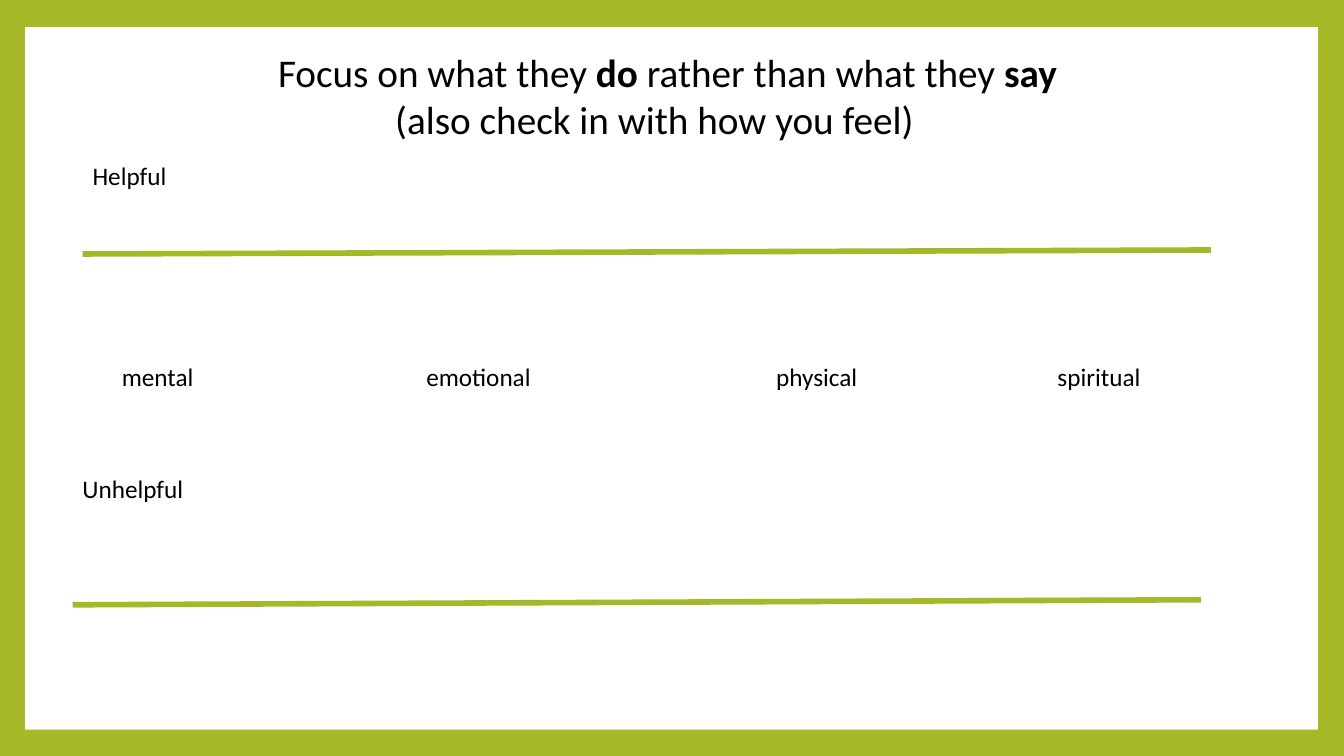
from lxml.etree import SubElement
from pptx import Presentation
from pptx.dml.color import RGBColor
from pptx.enum.shapes import MSO_CONNECTOR as Connector, MSO_SHAPE as Shape
from pptx.enum.text import MSO_ANCHOR as Anchor, MSO_AUTO_SIZE as AutoSize, PP_ALIGN as Align
from pptx.oxml.ns import qn
from pptx.util import Inches, Pt

GREEN = RGBColor(0xA6, 0xB7, 0x27)
WHITE = RGBColor(0xFF, 0xFF, 0xFF)
BLACK = RGBColor(0x00, 0x00, 0x00)
FONT = "Calibri"

TITLE_LINES = [
    [("Focus on what they ", False), ("do ", True),
     ("rather than what they ", False), ("say", True)],
    [("(also check in with how you feel)", False)],
]
SCALE_LABELS = [("Helpful", 0.82, 1.54, 0.96), ("Unhelpful", 0.72, 4.65, 1.23)]
ASPECT_TOP = 3.54
ASPECTS = [("mental", 1.11, 0.94), ("emotional", 4.13, 1.27),
           ("physical", 7.6, 1.04), ("spiritual", 10.39, 1.04)]
SCALE_LINES = [(0.82, 2.52, 12.01, 2.48), (0.72, 6, 11.91, 5.95)]


def add_text(paragraph, text, size=18, bold=False, color=BLACK):
    run = paragraph.add_run()
    run.text = text
    run.font.name = FONT
    run.font.size = Pt(size)
    run.font.bold = bold
    run.font.color.rgb = color


def add_title(slide):
    title = slide.shapes.title
    title.left, title.top = Inches(2.33), Inches(0.43)
    title.width, title.height = Inches(8.58), Inches(1.65)
    frame = title.text_frame
    frame.word_wrap = True
    frame.auto_size = AutoSize.NONE
    frame.vertical_anchor = Anchor.TOP
    for index, line in enumerate(TITLE_LINES):
        paragraph = frame.add_paragraph() if index else frame.paragraphs[0]
        paragraph.alignment = Align.CENTER
        paragraph.line_spacing = 1.0
        for text, bold in line:
            add_text(paragraph, text, size=28, bold=bold)
    paragraph._p.get_or_add_pPr().set("marR", str(Inches(0.26)))


def add_panel(slide):
    panel = slide.shapes.add_shape(
        Shape.RECTANGLE, Inches(0.25), Inches(0.27), Inches(12.82), Inches(6.97))
    panel.shadow.inherit = False
    panel.fill.solid()
    panel.fill.fore_color.rgb = WHITE
    panel.line.fill.background()
    slide.shapes.title._element.addprevious(panel._element)


def add_label(slide, text, left, top, width):
    label = slide.shapes.add_textbox(Inches(left), Inches(top), Inches(width), Inches(0.4))
    label.text_frame.word_wrap = False
    label.text_frame.auto_size = AutoSize.SHAPE_TO_FIT_TEXT
    add_text(label.text_frame.paragraphs[0], text)


def add_scale_line(slide, *ends):
    line = slide.shapes.add_connector(Connector.STRAIGHT, *map(Inches, ends))
    line.line.color.rgb = GREEN
    line.line.width = Pt(4)
    SubElement(line._element.spPr, qn("a:effectLst"))


def main():
    presentation = Presentation()
    presentation.slide_width, presentation.slide_height = Inches(13.33), Inches(7.5)
    slide = presentation.slides.add_slide(presentation.slide_layouts[5])
    slide.background.fill.solid()
    slide.background.fill.fore_color.rgb = GREEN
    add_panel(slide)
    add_title(slide)
    for ends in SCALE_LINES:
        add_scale_line(slide, *ends)
    for label in SCALE_LABELS:
        add_label(slide, *label)
    for text, left, width in ASPECTS:
        add_label(slide, text, left, ASPECT_TOP, width)
    presentation.save("out.pptx")


if __name__ == "__main__":
    main()
